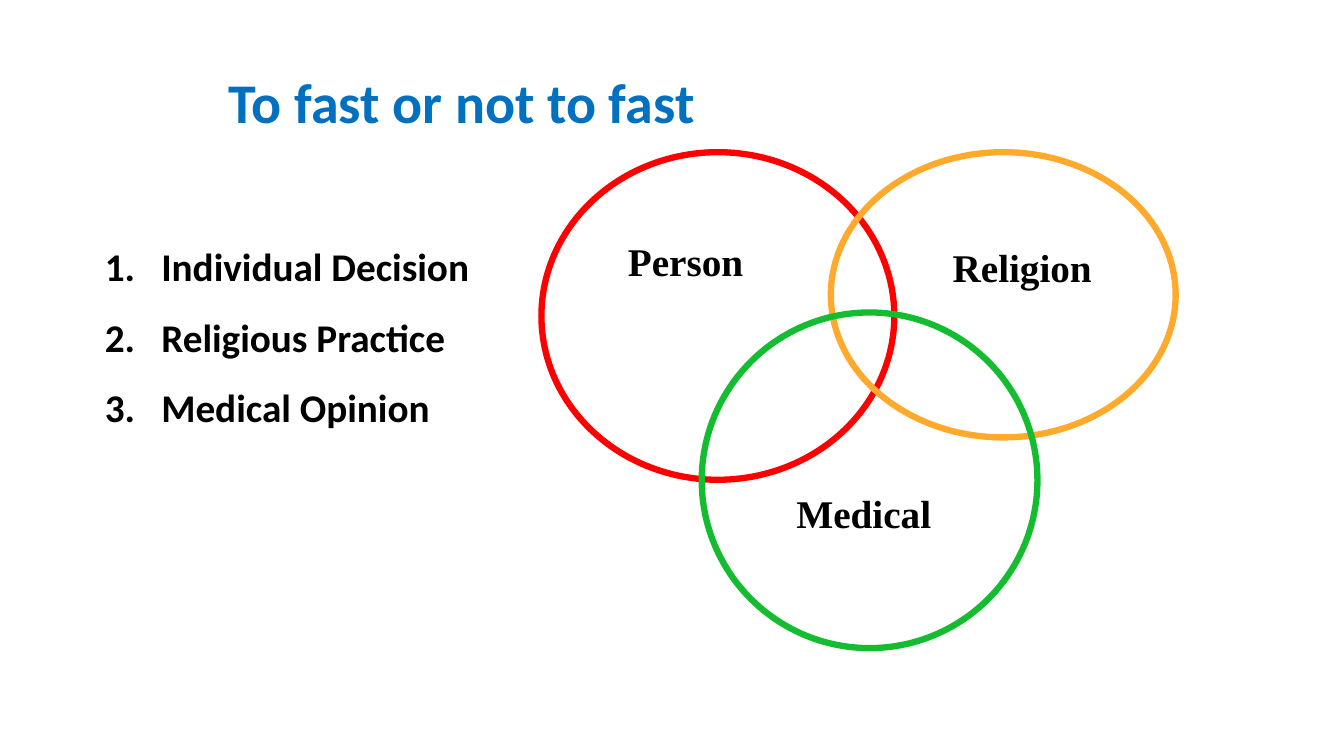
from lxml import etree
from pptx import Presentation
from pptx.dml.color import RGBColor
from pptx.enum.shapes import MSO_SHAPE as SHAPE
from pptx.enum.text import MSO_ANCHOR as ANCHOR, MSO_AUTO_SIZE as AUTO, PP_ALIGN as ALIGN
from pptx.oxml.ns import qn
from pptx.util import Inches, Pt

CIRCLES = [
    ("FF0000", (5.37, 1.51, 3.5, 3.25)),
    ("FFAA2D", (8.24, 1.51, 3.42, 2.83)),
    ("14BC30", (6.96, 3.1, 3.33, 3.33)),
]
LABELS = [
    ("Person", (6.13, 2.31, 1.36, 0.57)),
    ("Medical", (7.8, 4.81, 1.55, 0.57)),
    ("Religion", (9.35, 2.36, 1.6, 0.57)),
]
REASONS = ["Individual Decision", "Religious Practice", "Medical Opinion"]


def rgb(value):
    return RGBColor.from_string(value)


def place(sp, box):
    sp.left, sp.top, sp.width, sp.height = map(Inches, box)


def style(p, size, font, color="000000"):
    p.alignment = ALIGN.LEFT
    p.font.size = Pt(size)
    p.font.name = font
    p.font.bold = True
    p.font.color.rgb = rgb(color)


def number(p, indent):
    """Give the paragraph an automatic number with a hanging indent."""
    pPr = p._p.get_or_add_pPr()
    pPr.set("marL", str(Inches(indent)))
    pPr.set("indent", str(-Inches(indent)))
    bullet = etree.Element(qn("a:buAutoNum"), type="arabicPeriod")
    pPr.insert_element_before(bullet, "a:tabLst", "a:defRPr", "a:extLst")


def fill_title(sp, text, box):
    place(sp, box)
    sp.fill.solid()
    sp.fill.fore_color.rgb = rgb("FFFFFF")
    tf = sp.text_frame
    tf.text = text
    tf.vertical_anchor = ANCHOR.MIDDLE
    tf.auto_size = AUTO.NONE
    p = tf.paragraphs[0]
    p.line_spacing = 0.9
    style(p, 40, "Calibri", "0070C0")


def fill_list(sp, items, box):
    place(sp, box)
    tf = sp.text_frame
    tf.text = "\n".join(items)
    tf.word_wrap = False
    tf.auto_size = AUTO.SHAPE_TO_FIT_TEXT
    tf.vertical_anchor = ANCHOR.TOP
    for p in tf.paragraphs:
        p.line_spacing = 1.5
        p.space_before = Pt(0)
        style(p, 28, "Calibri")
        number(p, 0.56)


def add_circle(slide, color, box):
    sp = slide.shapes.add_shape(SHAPE.OVAL, *map(Inches, box))
    sp.shadow.inherit = False
    sp.fill.background()
    sp.line.color.rgb = rgb(color)
    sp.line.width = Pt(4.5)


def add_label(slide, text, box):
    tf = slide.shapes.add_textbox(*map(Inches, box)).text_frame
    tf.text = text
    tf.word_wrap = False
    tf.auto_size = AUTO.SHAPE_TO_FIT_TEXT
    style(tf.paragraphs[0], 28, "Times New Roman")


def main():
    prs = Presentation()
    prs.slide_width, prs.slide_height = Inches(13.33), Inches(7.5)
    slide = prs.slides.add_slide(prs.slide_layouts[1])
    fill_title(slide.shapes.title, "To fast or not to fast", (2.17, 0.66, 9, 0.78))
    fill_list(slide.placeholders[1], REASONS, (0.94, 2.12, 3.86, 2.15))
    for color, box in CIRCLES:
        add_circle(slide, color, box)
    for text, box in LABELS:
        add_label(slide, text, box)
    prs.save("out.pptx")


if __name__ == "__main__":
    main()
